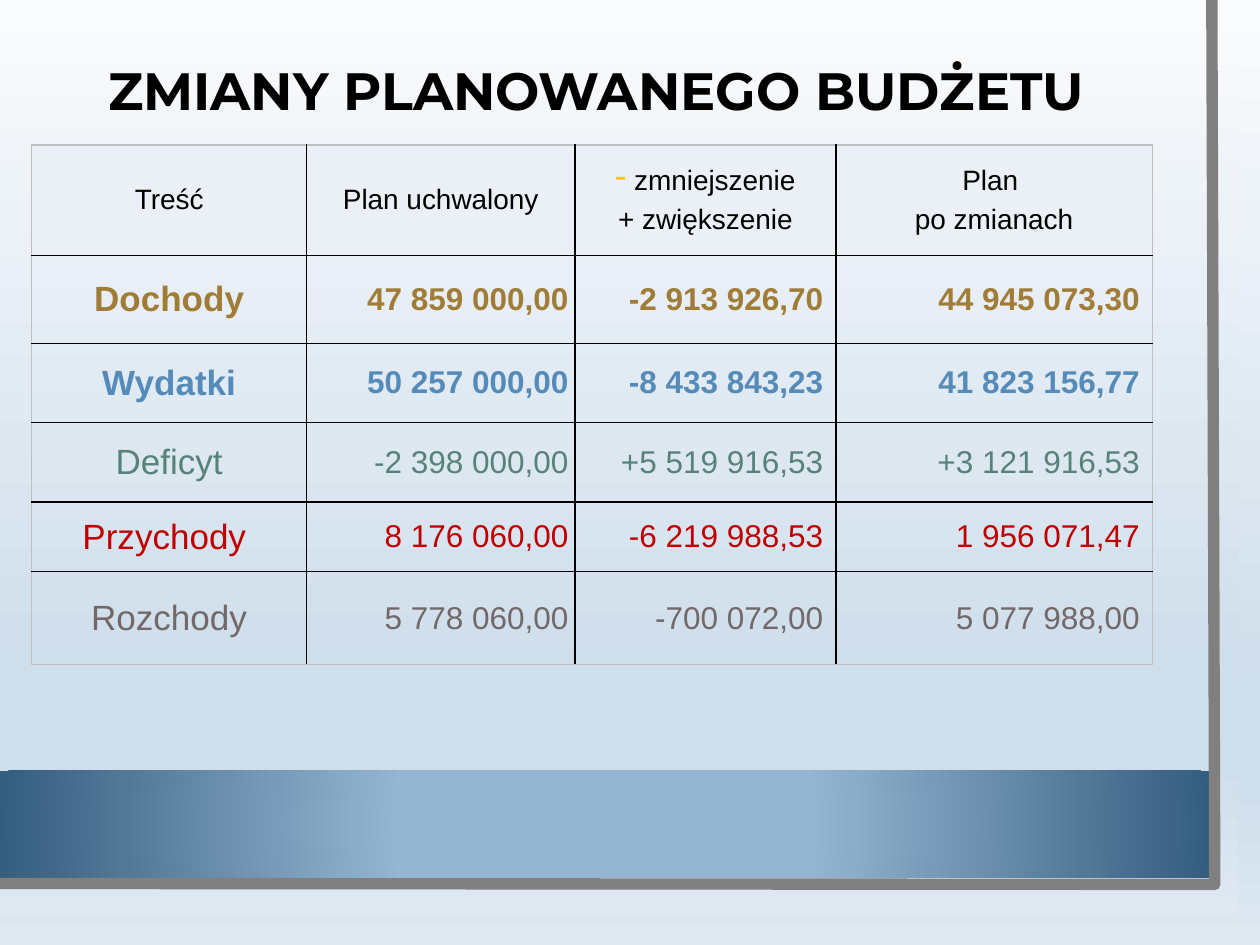
from lxml.etree import SubElement
from pptx import Presentation
from pptx.dml.color import RGBColor
from pptx.enum.shapes import MSO_SHAPE
from pptx.enum.text import MSO_ANCHOR, PP_ALIGN
from pptx.oxml.ns import qn
from pptx.util import Cm, Pt

BLACK = RGBColor(0x00, 0x00, 0x00)
FRAME_GREY = RGBColor(0x80, 0x80, 0x80)
EDGE_GREY = RGBColor(0xBF, 0xBF, 0xBF)
HEADER_FILL = RGBColor(0xEA, 0xF0, 0xF6)
BULLET_YELLOW = RGBColor(0xFF, 0xCC, 0x00)
GOLD = RGBColor(0xA1, 0x7C, 0x36)
BLUE = RGBColor(0x55, 0x8B, 0xB8)
GREEN = RGBColor(0x57, 0x82, 0x79)
RED = RGBColor(0xC0, 0x00, 0x00)
TAUPE = RGBColor(0x72, 0x68, 0x68)
PALE = RGBColor(0xFA, 0xFB, 0xFD)
MIST = RGBColor(0xCF, 0xDE, 0xEB)
HAZE = RGBColor(0xDF, 0xE9, 0xF2)
BAND_LIGHT = RGBColor(0x94, 0xB6, 0xD2)
BAND_DARK = RGBColor(0x35, 0x5D, 0x7E)

SKY_STOPS = [(0, PALE), (74, MIST), (83, MIST), (100, HAZE)]
BAND_STOPS = [(34, BAND_LIGHT), (100, BAND_DARK)]


def set_gradient(fill, element, stops, circular=False):
    fill.gradient()
    gradient = element.find(".//" + qn("a:gradFill"))
    for child in list(gradient):
        gradient.remove(child)
    stop_list = SubElement(gradient, qn("a:gsLst"))
    for position, color in stops:
        stop = SubElement(stop_list, qn("a:gs"), pos=str(position * 1000))
        SubElement(stop, qn("a:srgbClr"), val=str(color))
    if circular:
        circle = SubElement(gradient, qn("a:path"), path="circle")
        SubElement(circle, qn("a:fillToRect"), l="50000", t="50000", r="50000", b="50000")
    else:
        SubElement(gradient, qn("a:lin"), ang="5400000", scaled="0")


def add_text(paragraph, text, color, **formats):
    run = paragraph.add_run()
    run.text = text
    for name, value in formats.items():
        setattr(run.font, name, value)
    run.font.color.rgb = color


presentation = Presentation()
presentation.slide_width = Cm(25.4)
presentation.slide_height = Cm(19.05)
slide = presentation.slides.add_slide(presentation.slide_layouts[6])
set_gradient(slide.background.fill, slide.element, SKY_STOPS)

panels = [
    (0, 24.97, 18.47, SKY_STOPS, False),
    (15.54, 24.38, 2.16, BAND_STOPS, True),
]
for top, width, height, stops, circular in panels:
    panel = slide.shapes.add_shape(MSO_SHAPE.RECTANGLE, Cm(0), Cm(top), Cm(width), Cm(height))
    panel.shadow.inherit = False
    panel.line.fill.background()
    set_gradient(panel.fill, panel.element, stops, circular)

builder = slide.shapes.build_freeform(Cm(24.43), Cm(0))
builder.add_line_segments([(Cm(24.49), Cm(17.83)), (Cm(-0.05), Cm(17.81))], close=False)
frame_line = builder.convert_to_shape()
frame_line.shadow.inherit = False
frame_line.fill.background()
frame_line.line.color.rgb = FRAME_GREY
frame_line.line.width = Pt(6.5)

title = slide.shapes.add_textbox(Cm(0.79), Cm(0.53), Cm(22.45), Cm(2.72))
title.text_frame.word_wrap = True
title.text_frame.vertical_anchor = MSO_ANCHOR.MIDDLE
title_paragraph = title.text_frame.paragraphs[0]
title_paragraph.alignment = PP_ALIGN.CENTER
title_paragraph.line_spacing = 0.9
add_text(title_paragraph, "ZMIANY PLANOWANEGO BUDŻETU", BLACK,
         name="Montserrat", size=Pt(30), bold=True)

column_widths = [5.54, 5.41, 5.26, 6.38]
row_heights = [2.23, 1.77, 1.6, 1.6, 1.4, 1.88]
budget_rows = [
    (BLACK, False, ["Treść", "Plan uchwalony", " zmniejszenie\n+ zwiększenie", "Plan \npo zmianach"]),
    (GOLD, True, ["Dochody", "47 859 000,00", "-2 913 926,70", "44 945 073,30"]),
    (BLUE, True, ["Wydatki", "50 257 000,00", "-8 433 843,23", "41 823 156,77"]),
    (GREEN, False, ["Deficyt", "-2 398 000,00", "+5 519 916,53", "+3 121 916,53"]),
    (RED, False, ["Przychody ", "8 176 060,00", "-6 219 988,53", "1 956 071,47"]),
    (TAUPE, False, ["Rozchody", "5 778 060,00", "-700 072,00", "5 077 988,00"]),
]
last_row = len(row_heights) - 1
last_column = len(column_widths) - 1
table = slide.shapes.add_table(
    len(row_heights), len(column_widths), Cm(0.64), Cm(2.92),
    Cm(sum(column_widths)), Cm(sum(row_heights))).table
table.first_row = False
table.horz_banding = False
for column, width in zip(table.columns, column_widths):
    column.width = Cm(width)
for row, height in zip(table.rows, row_heights):
    row.height = Cm(height)

for row_index, (color, bold, texts) in enumerate(budget_rows):
    is_header = row_index == 0
    for column_index, text in enumerate(texts):
        cell = table.cell(row_index, column_index)
        cell.vertical_anchor = MSO_ANCHOR.MIDDLE
        if column_index == 1 and not is_header:
            for side in ("left", "right", "top", "bottom"):
                setattr(cell, f"margin_{side}", Cm(0.13))

        outer_edges = {
            "a:lnL": column_index == 0,
            "a:lnR": column_index == last_column,
            "a:lnT": row_index == 0,
            "a:lnB": row_index == last_row,
        }
        properties = cell._tc.get_or_add_tcPr()
        for tag, is_outer in outer_edges.items():
            border = SubElement(properties, qn(tag), w=str(Pt(1)))
            border_fill = SubElement(border, qn("a:solidFill"))
            SubElement(border_fill, qn("a:srgbClr"), val=str(EDGE_GREY if is_outer else BLACK))
        if is_header:
            cell.fill.solid()
            cell.fill.fore_color.rgb = HEADER_FILL
        else:
            cell.fill.background()

        is_label = is_header or column_index == 0
        size = 16 if is_header else 20 if column_index == 0 else 18
        for line_index, line in enumerate(text.split("\n")):
            frame = cell.text_frame
            paragraph = frame.add_paragraph() if line_index else frame.paragraphs[0]
            paragraph.alignment = PP_ALIGN.CENTER if is_label else PP_ALIGN.RIGHT
            if is_label:
                paragraph.line_spacing = 1.01
            if line_index:
                paragraph.space_before = Pt(4.2)
            if line.startswith(" "):
                bullet = paragraph._p.get_or_add_pPr()
                bullet.set("marL", "0")
                bullet.set("indent", "0")
                bullet_color = SubElement(bullet, qn("a:buClr"))
                SubElement(bullet_color, qn("a:srgbClr"), val=str(BULLET_YELLOW))
                SubElement(bullet, qn("a:buSzPct"), val="120000")
                SubElement(bullet, qn("a:buChar"), char="-")
            add_text(paragraph, line, color, name="Arial", size=Pt(size), bold=bold)

presentation.save("out.pptx")
